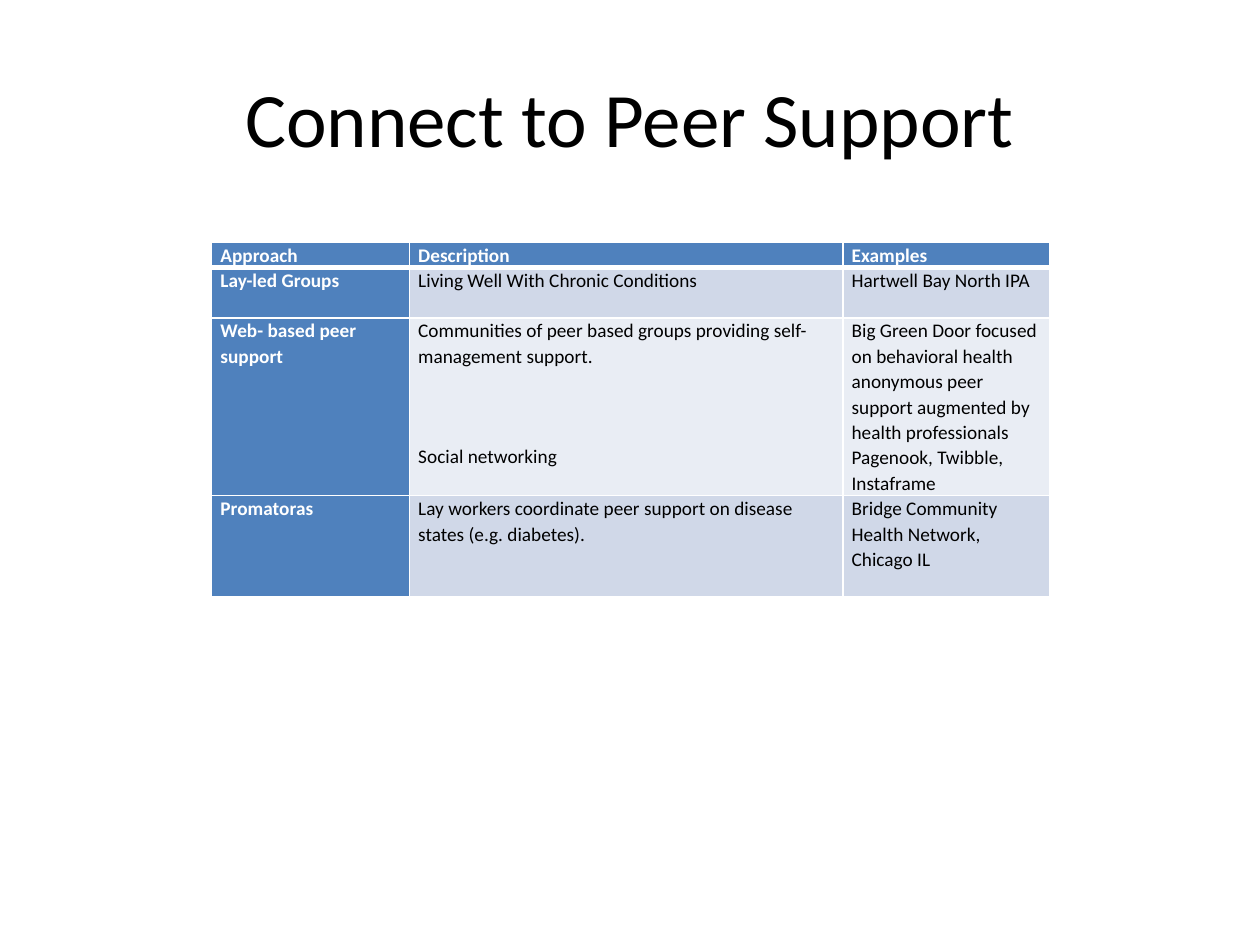
from lxml import etree
from pptx import Presentation
from pptx import util as u
from pptx.dml.color import RGBColor
from pptx.enum import text
from pptx.oxml import ns

FONT = "Calibri"
HEADER, WHITE, BLACK = "4F81BD", "FFFFFF", "000000"
BANDS = ("D0D8E8", "E9EDF4")
LINE_HEIGHT = 0.2
COLUMN_WIDTHS = (1.57, 3.44, 1.64)
ROW_LINES = (1, 2, 7, 4)
TABLE_LEFT, TABLE_TOP = 0.168, 0.256
GAP = 43

ROWS = (
    (["Approach"], ["Description"], ["Examples"]),
    (["Lay-led Groups"], ["Living Well With Chronic Conditions"],
     ["Hartwell Bay North IPA"]),
    (["Web- based peer support"],
     ["Communities of peer based groups providing self-management support.",
      "Social networking"],
     ["Big Green Door focused on behavioral health anonymous peer support "
      "augmented by health professionals",
      "Pagenook, Twibble, Instaframe"]),
    (["Promatoras"],
     ["Lay workers coordinate peer support on disease states (e.g. diabetes)."],
     ["Bridge Community Health Network, Chicago IL"]),
)


def color(value):
    """Turn a hex string into a colour."""
    return RGBColor.from_string(value)


def write(paragraph, content, size=11, ink=BLACK, bold=False,
          align=text.PP_ALIGN.LEFT, spacing=None, before=0):
    """Write formatted text into a paragraph."""
    paragraph.alignment = align
    paragraph.line_spacing = spacing
    paragraph.space_before = u.Pt(before)
    run = paragraph.add_run()
    run.text = content
    run.font.name, run.font.size, run.font.bold = FONT, u.Pt(size), bold
    run.font.color.rgb = color(ink)


def add_borders(cell, **widths):
    """Draw white cell borders with the given widths in points."""
    properties = cell._tc.get_or_add_tcPr()
    for index, (side, width) in enumerate(widths.items()):
        line = etree.Element(ns.qn(f"a:ln{side}"), w=str(u.Pt(width)))
        fill = etree.SubElement(line, ns.qn("a:solidFill"))
        etree.SubElement(fill, ns.qn("a:srgbClr"), val=WHITE)
        properties.insert(index, line)


def fill_cell(cell, row, column, contents):
    """Format one table cell and write its paragraphs."""
    heading = row == 0 or column == 0
    cell.margin_left = cell.margin_right = u.Inches(0.07)
    cell.margin_top = cell.margin_bottom = 0
    cell.fill.solid()
    cell.fill.fore_color.rgb = color(HEADER if heading else BANDS[(row - 1) % 2])
    add_borders(cell, L=1, R=1, T=3 if row == 1 else 1, B=3 if row == 0 else 1)
    frame = cell.text_frame
    for index, content in enumerate(contents):
        paragraph = frame.add_paragraph() if index else frame.paragraphs[0]
        write(paragraph, content, ink=WHITE if heading else BLACK, bold=heading,
              spacing=1.07, before=GAP if index and column == 1 else 0)


def add_support_table(presentation, slide):
    """Add the table of peer support approaches."""
    table = slide.shapes.add_table(
        len(ROWS), len(COLUMN_WIDTHS),
        int(presentation.slide_width * TABLE_LEFT),
        int(presentation.slide_height * TABLE_TOP),
        u.Inches(sum(COLUMN_WIDTHS)),
        u.Inches(sum(ROW_LINES) * LINE_HEIGHT)).table
    for column, width in zip(table.columns, COLUMN_WIDTHS):
        column.width = u.Inches(width)
    for row, lines in zip(table.rows, ROW_LINES):
        row.height = u.Inches(lines * LINE_HEIGHT)
    for row, cells in enumerate(ROWS):
        for column, contents in enumerate(cells):
            fill_cell(table.cell(row, column), row, column, contents)


def add_title(presentation, slide, content):
    """Place and fill the title placeholder."""
    title = slide.shapes.title
    title.left, title.width = (int(presentation.slide_width * share)
                               for share in (0.05, 0.9))
    title.top, title.height = u.Inches(0.3), u.Inches(1.25)
    title.text_frame.vertical_anchor = text.MSO_ANCHOR.MIDDLE
    write(title.text_frame.paragraphs[0], content, size=44,
          align=text.PP_ALIGN.CENTER)


def main():
    """Build and save the slide."""
    presentation = Presentation()
    presentation.slide_width, presentation.slide_height = u.Inches(10), u.Inches(7.5)
    slide = presentation.slides.add_slide(
        presentation.slide_layouts.get_by_name("Title Only"))
    add_title(presentation, slide, "Connect to Peer Support")
    add_support_table(presentation, slide)
    presentation.save("out.pptx")


if __name__ == "__main__":
    main()
